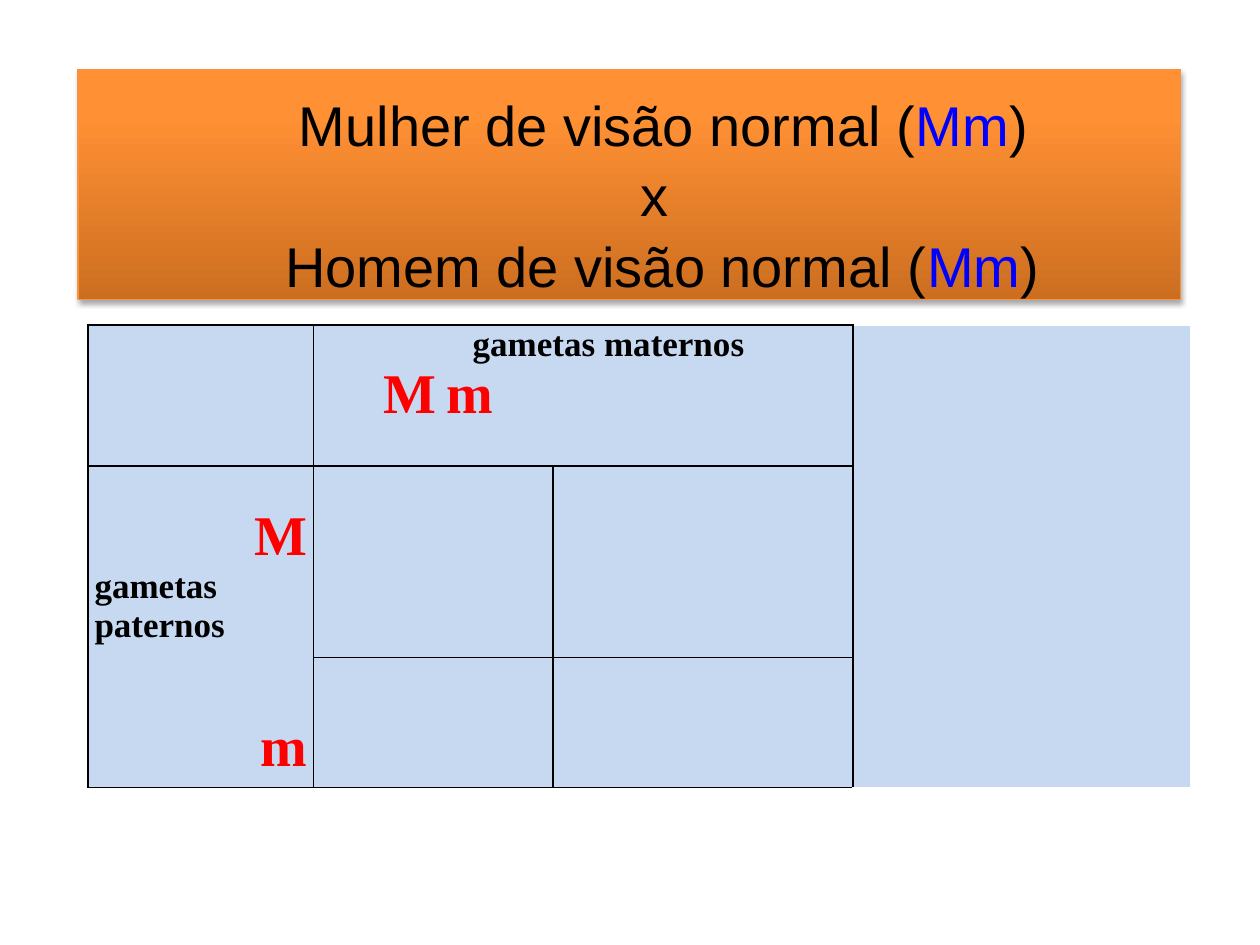
"""Build a Punnett square slide for a cross between two carriers."""
import lxml.etree
import pptx
import pptx.dml.color
import pptx.enum.text
import pptx.oxml
import pptx.oxml.ns
import pptx.util

BLACK, RED, BLUE, PALE = "000000", "FF0000", "0000FF", "C6D9F1"
SERIF = "Times New Roman"
ALIGN = pptx.enum.text.PP_ALIGN
IN = pptx.util.Inches

TITLE = [
    (0.54, [("Mulher de visão normal (", BLACK), ("Mm", BLUE), (")", BLACK)]),
    (0.4, [("x", BLACK)]),
    (0.52, [("Homem de visão normal (", BLACK), ("Mm", BLUE), (")", BLACK)]),
]
MATERNAL = [
    ("gametas maternos", dict(size=20, align=ALIGN.CENTER, indent=0.4)),
    ("\tM\tm", dict(size=32, color=RED, tabs=(0.79, 3.44))),
]
PATERNAL = [
    ("M", dict(size=32, color=RED, align=ALIGN.RIGHT)),
    ("gametas paternos", dict(size=20, align=ALIGN.LEFT)),
    ("m", dict(size=32, color=RED, align=ALIGN.RIGHT, before=41)),
]
COLS, ROWS = (1.79, 1.9, 2.38, 2.68), (1.12, 1.52, 1.03)
MERGES = [((0, 1), (0, 2)), ((0, 3), (2, 3)), ((1, 0), (2, 0))]
TEXTS = {(0, 1): (MATERNAL, 0), (1, 0): (PATERNAL, 0.31)}


def rgb(value):
    """Turn a hex string into a colour."""
    return pptx.dml.color.RGBColor.from_string(value)


def element(parent, tag, **attrs):
    """Append a drawing element to a parent."""
    values = {k: str(v) for k, v in attrs.items()}
    return lxml.etree.SubElement(parent, pptx.oxml.ns.qn(tag), values)


def add_run(p, text, size=32, color=BLACK, font="Arial", bold=False):
    """Add a formatted run."""
    r = p.add_run()
    r.text = text
    r.font.size, r.font.name, r.font.bold = pptx.util.Pt(size), font, bold
    r.font.color.rgb = rgb(color)


def format_paragraph(p, align=ALIGN.LEFT, indent=0, before=0, tabs=()):
    """Set alignment, first-line indent, spacing and tab stops."""
    p.alignment, p.space_before = align, pptx.util.Pt(before)
    pPr = p._p.get_or_add_pPr()
    pPr.set("marL", "0")
    pPr.set("indent", str(IN(indent)))
    if tabs:
        tab_list = element(pPr, "a:tabLst")
        for pos in tabs:
            element(tab_list, "a:tab", pos=IN(pos), algn="l")


def paragraphs(tf, count):
    """Give a text frame the wanted number of paragraphs."""
    return [tf.paragraphs[0]] + [tf.add_paragraph() for _ in range(count - 1)]


def border(cell, sides):
    """Draw black lines on the given sides of a cell."""
    tcPr = cell._tc.get_or_add_tcPr()
    for i, side in enumerate(sides):
        ln = pptx.oxml.parse_xml(
            f'<a:ln{side} {pptx.oxml.ns.nsdecls("a")} w="12700"><a:solidFill>'
            f'<a:srgbClr val="{BLACK}"/></a:solidFill></a:ln{side}>')
        tcPr.insert(i, ln)


def build_title(sp):
    """Format the title box and write the cross."""
    sp.left, sp.top, sp.width, sp.height = map(IN, (0.62, 0.55, 8.75, 1.83))
    sp.fill.gradient()
    sp.fill.gradient_angle = 90
    for stop, pos, color in zip(sp.fill.gradient_stops, (0, 0.8), ("CC6E20", "FF9034")):
        stop.position, stop.color.rgb = pos, rgb(color)
    sp.line.color.rgb, sp.line.width = rgb("F69240"), pptx.util.Pt(0.75)
    sp.shadow.inherit = False
    effects = sp._element.spPr.find(pptx.oxml.ns.qn("a:effectLst"))
    shadow = element(effects, "a:outerShdw", blurRad=pptx.util.Pt(3.1),
                     dist=pptx.util.Pt(1.8), dir=5400000, rotWithShape=0)
    element(element(shadow, "a:srgbClr", val=BLACK), "a:alpha", val=35000)
    tf = sp.text_frame
    tf.word_wrap, tf.auto_size = True, pptx.enum.text.MSO_AUTO_SIZE.NONE
    tf.vertical_anchor = pptx.enum.text.MSO_ANCHOR.MIDDLE
    tf.margin_left = tf.margin_right = IN(0.1)
    tf.margin_top, tf.margin_bottom = IN(0.17), IN(0.04)
    for p, (indent, runs) in zip(paragraphs(tf, len(TITLE)), TITLE):
        format_paragraph(p, align=ALIGN.CENTER, indent=indent)
        p.line_spacing = 1.05
        for text, color in runs:
            add_run(p, text, color=color)


def build_table(s):
    """Add the square of gametes."""
    table = s.shapes.add_table(len(ROWS), len(COLS), IN(0.7), IN(2.58),
                               IN(sum(COLS)), IN(sum(ROWS))).table
    table.first_row = table.horz_banding = False
    for col, width in zip(table.columns, COLS):
        col.width = IN(width)
    for row, height in zip(table.rows, ROWS):
        row.height = IN(height)
    for first, last in MERGES:
        table.cell(*first).merge(table.cell(*last))
    for i in range(len(ROWS)):
        for j in range(len(COLS)):
            cell = table.cell(i, j)
            cell.fill.solid()
            cell.fill.fore_color.rgb = rgb(PALE)
            border(cell, "L" if j == len(COLS) - 1 else "LRTB")
    for (i, j), (lines, top) in TEXTS.items():
        cell = table.cell(i, j)
        cell.margin_left = cell.margin_right = IN(0.05)
        cell.margin_top, cell.margin_bottom = IN(top), 0
        for p, (text, style) in zip(paragraphs(cell.text_frame, len(lines)), lines):
            style = dict(style)
            run = {k: style.pop(k) for k in ("size", "color") if k in style}
            format_paragraph(p, **style)
            add_run(p, text, font=SERIF, bold=True, **run)


def main():
    """Build and save the slide."""
    prs = pptx.Presentation()
    prs.slide_width, prs.slide_height = IN(10), IN(7.5)
    s = prs.slides.add_slide(prs.slide_layouts[5])
    build_table(s)
    build_title(s.shapes.title)
    prs.save("out.pptx")


if __name__ == "__main__":
    main()
